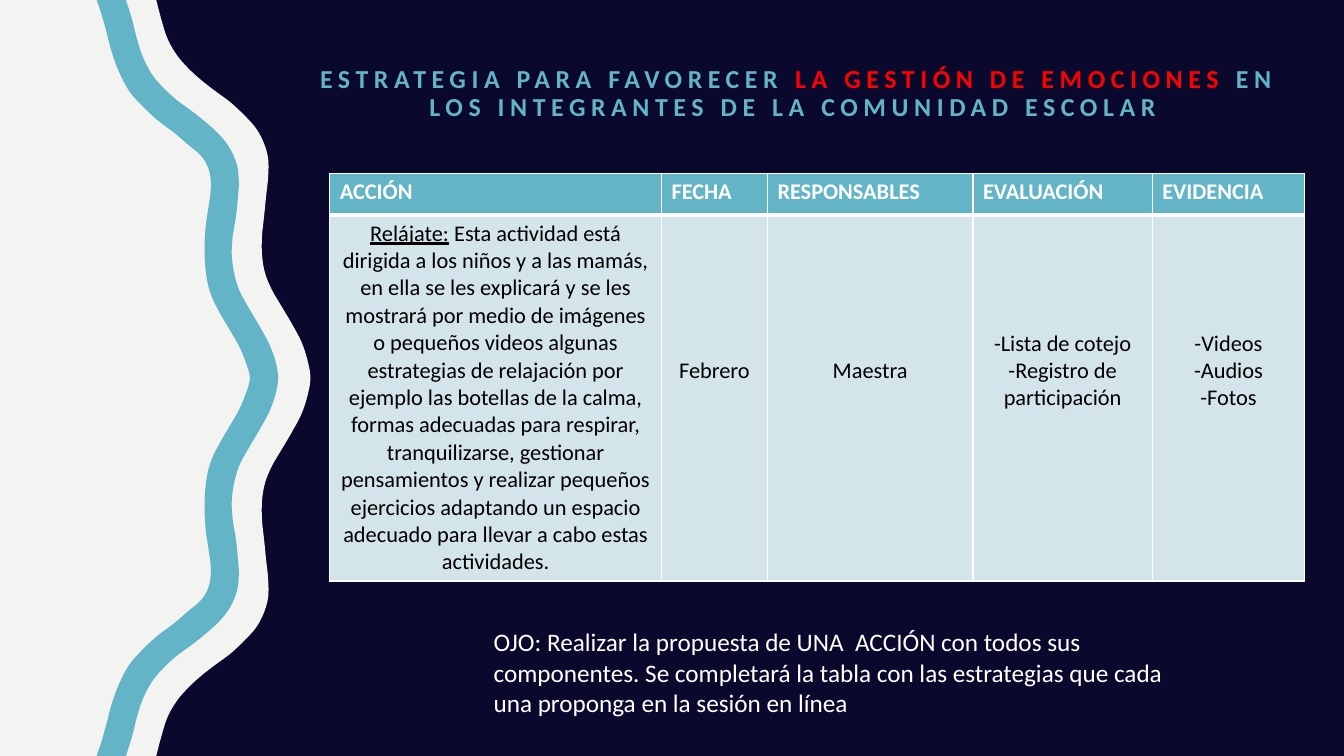
from typing import NamedTuple

from lxml.etree import SubElement
from pptx import Presentation
from pptx.dml.color import RGBColor
from pptx.enum.text import MSO_ANCHOR as Anchor, PP_ALIGN as Align
from pptx.oxml.ns import qn
from pptx.util import Cm, Pt

NAVY, TEAL, PALE, SAND = "0B082E", "62B4C6", "D3E5EA", "F3F3F2"
WHITE, BLACK, RED = "FFFFFF", "000000", "FF0000"
FONT = "Calibri"
UNIT = Cm(0.0254)  # the waves are plotted in hundredths of an inch
TALL = 750

Point = tuple[float, float]


class Column(NamedTuple):
    head: str
    width: float
    body: str
    top: float


class Part(NamedTuple):
    text: str
    color: str


COLUMNS = [
    Column("ACCIÓN", 8.36, "Relájate:| Esta actividad está dirigida a los niños y a las "
           "mamás, en ella se les explicará y se les mostrará por medio de imágenes o "
           "pequeños videos algunas estrategias de relajación por ejemplo las botellas "
           "de la calma, formas adecuadas para respirar, tranquilizarse, gestionar "
           "pensamientos y realizar pequeños ejercicios adaptando un espacio adecuado "
           "para llevar a cabo estas actividades.", 0.13),
    Column("FECHA", 2.67, "Febrero", 3.59),
    Column("RESPONSABLES", 5.18, "Maestra", 3.59),
    Column("EVALUACIÓN", 4.52, "-Lista de cotejo\n-Registro de participación", 2.9),
    Column("EVIDENCIA", 3.84, "-Videos\n-Audios\n-Fotos", 2.9),
]
TITLE = [
    Part("ESTRATEGIA PARA FAVORECER ", TEAL),
    Part("LA GESTIÓN DE EMOCIONES", RED),
    Part(" EN LOS INTEGRANTES DE LA COMUNIDAD ESCOLAR ", TEAL),
]
NOTE = ("OJO: Realizar la propuesta de UNA  ACCIÓN con todos sus componentes. Se "
        "completará la tabla con las estrategias que cada una proponga en la sesión en línea")

# Upper half of each edge; the lower half mirrors it.
SHORE = [(155, 0), (160, 19), (166, 38), (175, 54), (186, 67), (199, 79), (213, 90),
         (228, 101), (241, 113), (253, 126), (261, 140), (266, 157), (266, 176),
         (264, 195), (262, 215), (260, 234), (260, 253), (263, 271), (270, 288),
         (280, 305), (290, 322), (299, 339), (305, 357), (308, 375)]
RIGHT = [(125, 0), (131, 19), (136, 39), (142, 57), (151, 74), (162, 87), (175, 99),
         (190, 110), (205, 122), (218, 134), (228, 147), (235, 163), (237, 180),
         (236, 197), (234, 216), (231, 234), (230, 252), (232, 269), (237, 287),
         (246, 304), (256, 321), (266, 339), (273, 357), (276, 375)]
LEFT = [(96, 0), (101, 15), (106, 33), (111, 52), (118, 71), (128, 90), (141, 105),
        (156, 119), (172, 131), (186, 143), (199, 154), (206, 165), (209, 177),
        (209, 190), (207, 205), (204, 226), (203, 250), (205, 275), (210, 294),
        (219, 312), (229, 329), (237, 343), (243, 357), (248, 375)]


def rgb(code: str) -> RGBColor:
    return RGBColor.from_string(code)


def edge(half: list[Point], steps: int = 4) -> list[Point]:
    """Mirror a half edge and smooth it with a Catmull-Rom curve."""
    full = half + [(x, TALL - y) for x, y in half[-2::-1]]
    ends = [full[0], *full, full[-1]]
    curve = []
    for quad in zip(ends, ends[1:], ends[2:], ends[3:]):
        for i in range(steps):
            t = i / steps
            curve.append(tuple(
                b + t * (c - a) / 2 + t**2 * (2*a - 5*b + 4*c - d) / 2
                + t**3 * (3*b - a - 3*c + d) / 2
                for a, b, c, d in zip(*quad)))
    return curve + [full[-1]]


def draw_wave(slide, points: list[Point], color: str) -> None:
    spots = [(x * UNIT, y * UNIT) for x, y in points]
    pen = slide.shapes.build_freeform(*spots[0])
    pen.add_line_segments(spots[1:], close=True)
    wave = pen.convert_to_shape()
    wave.shadow.inherit = False
    wave.fill.solid()
    wave.fill.fore_color.rgb = rgb(color)
    wave.line.fill.background()


def style(run, size: float, color: str, bold: bool = False) -> None:
    run.font.name = FONT
    run.font.size = Pt(size)
    run.font.bold = bold
    run.font.color.rgb = rgb(color)


def add_title(slide) -> None:
    title = slide.shapes.title
    title.left, title.top, title.width, title.height = Cm(7.42), Cm(1.55), Cm(25.4), Cm(2.64)
    frame = title.text_frame
    frame.word_wrap = True
    frame.vertical_anchor = Anchor.TOP
    par = frame.paragraphs[0]
    par.alignment = Align.CENTER
    par.line_spacing = 0.9
    for part in TITLE:
        run = par.add_run()
        run.text = part.text
        style(run, 18.5, part.color, True)
        run.font._element.set("spc", "400")


def set_lines(cell, top: float, base: float) -> None:
    """Give a cell white borders, with widths in points."""
    props = cell._tc.get_or_add_tcPr()
    for side, width in zip("LRTB", (1, 1, top, base)):
        line = SubElement(props, qn(f"a:ln{side}"), w=str(Pt(width)))
        fill = SubElement(line, qn("a:solidFill"))
        SubElement(fill, qn("a:srgbClr"), val=WHITE)


def fill_cell(cell, text: str, head: bool) -> None:
    set_lines(cell, 1 if head else 3, 3 if head else 1)
    cell.fill.solid()
    cell.fill.fore_color.rgb = rgb(TEAL if head else PALE)
    lead, bar, rest = text.partition("|")
    cell.text_frame.text = lead
    if bar:
        par = cell.text_frame.paragraphs[0]
        par.runs[0].font.underline = True
        par.add_run().text = rest
    for par in cell.text_frame.paragraphs:
        par.alignment = Align.LEFT if head else Align.CENTER
        for run in par.runs:
            style(run, 16, WHITE if head else BLACK, head)


def add_plan(slide) -> None:
    width = sum(col.width for col in COLUMNS)
    table = slide.shapes.add_table(2, len(COLUMNS), Cm(8.31), Cm(4.37),
                                   Cm(width), Cm(10.25)).table
    table.horz_banding = False
    table.rows[0].height, table.rows[1].height = Cm(1.04), Cm(9.21)
    for i, col in enumerate(COLUMNS):
        table.columns[i].width = Cm(col.width)
        fill_cell(table.cell(0, i), col.head, True)
        body = table.cell(1, i)
        fill_cell(body, col.body, False)
        body.margin_top = Cm(col.top)


def add_note(slide) -> None:
    box = slide.shapes.add_textbox(Cm(12.19), Cm(15.67), Cm(17.4), Cm(2.57))
    frame = box.text_frame
    frame.word_wrap = True
    frame.text = NOTE
    style(frame.paragraphs[0].runs[0], 18, WHITE)


def main() -> None:
    deck = Presentation()
    deck.slide_width, deck.slide_height = Cm(33.87), Cm(19.05)
    slide = deck.slides.add_slide(deck.slide_layouts[5])
    slide.background.fill.solid()
    slide.background.fill.fore_color.rgb = rgb(NAVY)
    draw_wave(slide, [(0, 0), *edge(SHORE), (0, TALL)], SAND)
    draw_wave(slide, edge(RIGHT) + edge(LEFT)[::-1], TEAL)
    add_title(slide)
    add_plan(slide)
    add_note(slide)
    deck.save("out.pptx")


if __name__ == "__main__":
    main()
